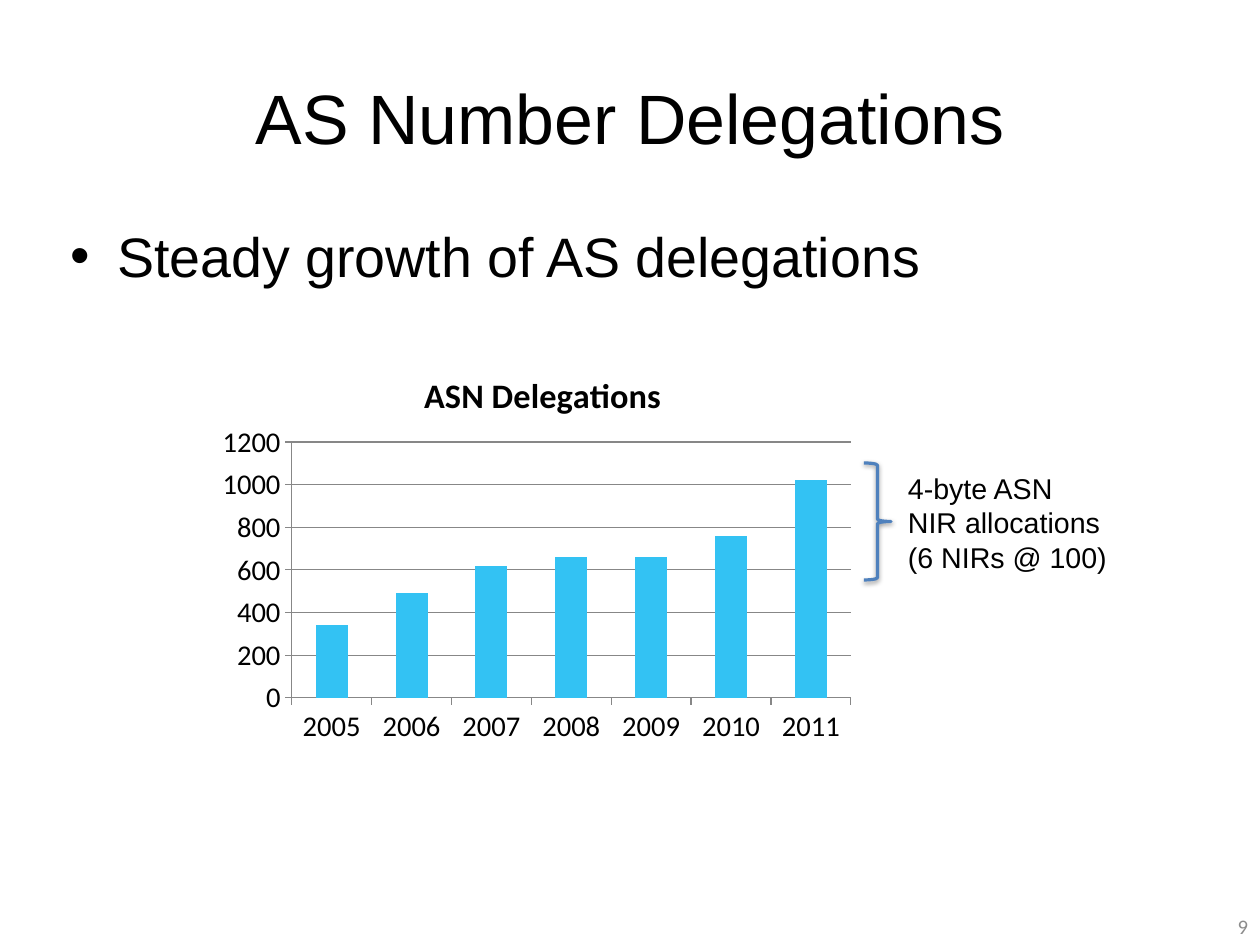
from dataclasses import dataclass
from typing import Optional

from lxml.etree import _Element as Element
from pptx import Presentation
from pptx.chart.data import CategoryChartData
from pptx.dml.color import RGBColor
from pptx.enum.chart import XL_CHART_TYPE as ChartType, XL_TICK_MARK as TickMark
from pptx.enum.shapes import MSO_SHAPE as ShapeKind
from pptx.enum.text import MSO_ANCHOR as Anchor, MSO_AUTO_SIZE as AutoSize, PP_ALIGN as Align
from pptx.oxml import parse_xml
from pptx.oxml.ns import nsdecls, qn
from pptx.util import Emu, Pt

EMU_PER_PX = 8000
COLORS = {
    "text": "000000",
    "number": "8C8C8C",
    "bar": "33C2F3",
    "grid": "878787",
    "brace": "4F81BD",
}
DELEGATIONS = {
    "2005": 340, "2006": 490, "2007": 620, "2008": 660,
    "2009": 660, "2010": 760, "2011": 1020,
}


@dataclass(frozen=True)
class Area:
    left: int
    top: int
    width: int
    height: int

    def emu(self) -> tuple:
        return tuple(px(v) for v in (self.left, self.top, self.width, self.height))


@dataclass(frozen=True)
class Label:
    area: Area
    lines: tuple
    size: int
    font: str = "Arial"
    color: str = "text"
    align: Align = Align.LEFT
    anchor: Anchor = Anchor.TOP
    margins: tuple = (12, 7)
    wrap: bool = True
    bullet: bool = False


TITLE = Label(Area(37, 38, 1188, 158), ("AS Number Delegations",), 44,
              align=Align.CENTER, anchor=Anchor.MIDDLE)
LABELS = (
    Label(Area(58, 215, 1166, 638), ("Steady growth of AS delegations",), 35, bullet=True),
    Label(Area(966, 908, 294, 36), ("9",), 13, "Calibri", "number",
          Align.RIGHT, Anchor.MIDDLE),
    Label(Area(897, 465, 224, 115), ("4-byte ASN", "NIR allocations", "(6 NIRs @ 100)"),
          18, margins=(11, 6), wrap=False),
)
CHART = Area(210, 339, 654, 414)
PLOT = Area(292, 442, 559, 256)
CHART_TITLE = Area(418, 365, 236, 42)
BRACE = Area(864, 463, 27, 117)


def px(value: int) -> Emu:
    return Emu(value * EMU_PER_PX)


def rgb(name: str) -> RGBColor:
    return RGBColor.from_string(COLORS[name])


def add_bullet(para) -> None:
    properties = para._p.get_or_add_pPr()
    properties.set("marL", str(px(47)))
    properties.set("indent", str(px(-47)))
    for tag in ('a:buFont typeface="Arial"', 'a:buChar char="•"'):
        properties.append(parse_xml(f"<{tag} {nsdecls('a')}/>"))


def write_label(box, label: Label) -> None:
    box.left, box.top, box.width, box.height = label.area.emu()
    frame = box.text_frame
    frame.auto_size = AutoSize.NONE if label.wrap else AutoSize.SHAPE_TO_FIT_TEXT
    frame.word_wrap = label.wrap
    frame.vertical_anchor = label.anchor
    frame.margin_left = frame.margin_right = px(label.margins[0])
    frame.margin_top = frame.margin_bottom = px(label.margins[1])
    frame.text = "\n".join(label.lines)
    for para in frame.paragraphs:
        para.alignment = label.align
        if label.bullet:
            add_bullet(para)
        para.font.name = label.font
        para.font.size = Pt(label.size)
        para.font.color.rgb = rgb(label.color)


def set_layout(parent: Element, index: int, area: Area, inner: bool) -> None:
    for layout in parent.findall(qn("c:layout")):
        parent.remove(layout)
    settings = {
        "xMode": "edge",
        "yMode": "edge",
        "x": round((area.left - CHART.left) / CHART.width, 3),
        "y": round((area.top - CHART.top) / CHART.height, 3),
    }
    if inner:
        settings = {"layoutTarget": "inner", **settings,
                    "w": round(area.width / CHART.width, 3),
                    "h": round(area.height / CHART.height, 3)}
    items = "".join(f'<c:{key} val="{value}"/>' for key, value in settings.items())
    parent.insert(index, parse_xml(
        f"<c:layout {nsdecls('c')}><c:manualLayout>{items}</c:manualLayout></c:layout>"))


def style_line(line) -> None:
    line.color.rgb = rgb("grid")
    line.width = Pt(0.75)


def add_delegations_chart(page) -> None:
    data = CategoryChartData(number_format="General")
    data.categories = list(DELEGATIONS)
    data.add_series("ASN Delegations", list(DELEGATIONS.values()))
    chart = page.shapes.add_chart(ChartType.COLUMN_STACKED, *CHART.emu(), data).chart
    chart.has_legend = False
    chart.font.name = "Calibri"
    chart.font.size = Pt(18)
    chart.font.color.rgb = rgb("text")

    chart.has_title = True
    frame = chart.chart_title.text_frame
    frame.text = "ASN Delegations"
    font = frame.paragraphs[0].font
    font.name, font.size, font.bold = "Calibri", Pt(21.6), True
    font.color.rgb = rgb("text")

    plot = chart.plots[0]
    plot.gap_width = 150
    plot.overlap = 100
    plot.vary_by_categories = False
    fill = plot.series[0].format.fill
    fill.solid()
    fill.fore_color.rgb = rgb("bar")

    for axis in (chart.category_axis, chart.value_axis):
        axis.major_tick_mark = TickMark.OUTSIDE
        axis.minor_tick_mark = TickMark.NONE
        style_line(axis.format.line)
    values = chart.value_axis
    values.minimum_scale, values.maximum_scale, values.major_unit = 0, 1200, 200
    values.has_major_gridlines = True
    style_line(values.major_gridlines.format.line)

    root = chart.element
    set_layout(root.find(".//" + qn("c:plotArea")), 0, PLOT, True)
    set_layout(root.find(".//" + qn("c:title")), 1, CHART_TITLE, False)


def add_brace(page) -> None:
    brace = page.shapes.add_shape(ShapeKind.RIGHT_BRACE, *BRACE.emu())
    brace.fill.background()
    brace.line.color.rgb = rgb("brace")
    brace.line.width = Pt(2)
    brace.shadow.inherit = False
    effects = brace.element.spPr.find(qn("a:effectLst"))
    effects.append(parse_xml(
        f'<a:outerShdw {nsdecls("a")} blurRad="{Pt(3.1)}" dist="{Pt(1.6)}" '
        'dir="5400000" rotWithShape="0"><a:srgbClr val="000000">'
        '<a:alpha val="38000"/></a:srgbClr></a:outerShdw>'))


def main() -> None:
    deck = Presentation()
    deck.slide_width, deck.slide_height = px(1260), px(945)
    page = deck.slides.add_slide(deck.slide_layouts[5])
    write_label(page.shapes.title, TITLE)
    add_delegations_chart(page)
    add_brace(page)
    for label in LABELS:
        write_label(page.shapes.add_textbox(*label.area.emu()), label)
    deck.save("out.pptx")


if __name__ == "__main__":
    main()
